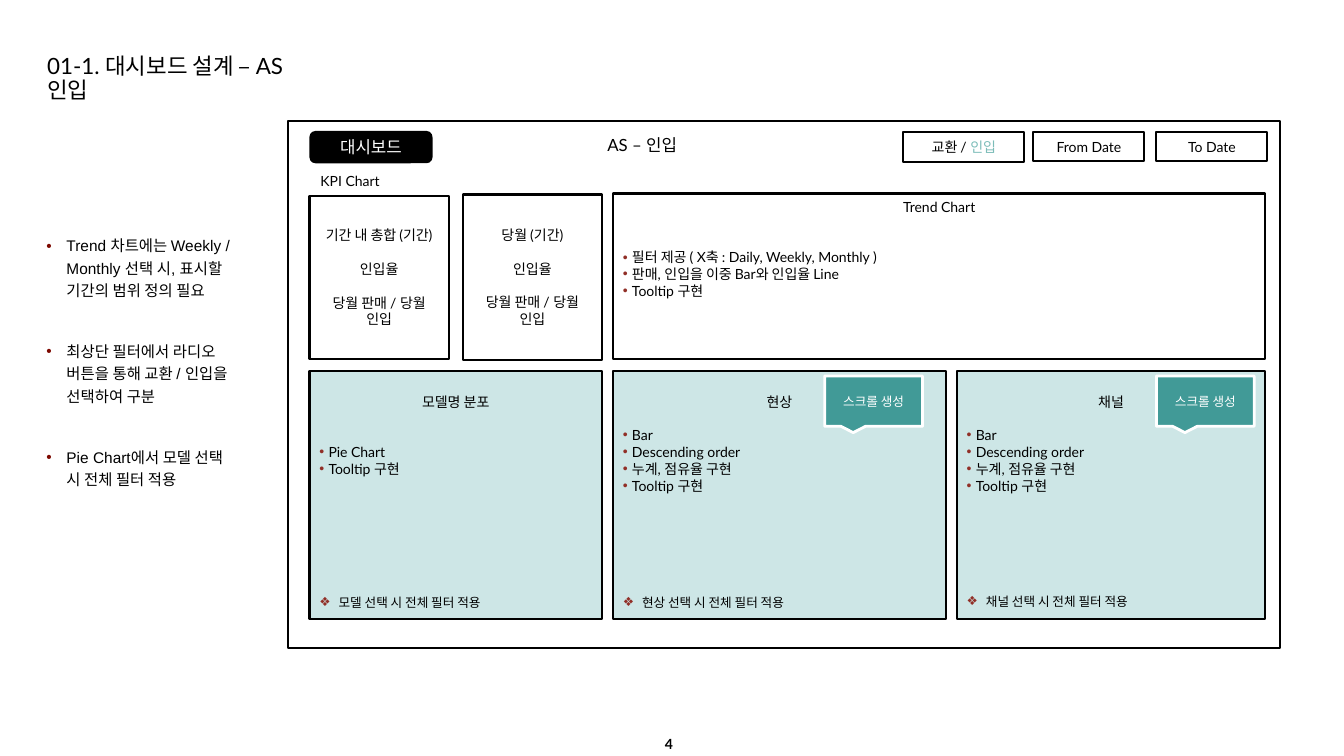
from dataclasses import dataclass

from lxml.etree import SubElement
from pptx import Presentation
from pptx.dml.color import RGBColor
from pptx.enum.shapes import MSO_SHAPE
from pptx.enum.text import MSO_ANCHOR, PP_ALIGN
from pptx.oxml.ns import qn
from pptx.util import Inches, Pt

BLACK, WHITE = "000000", "FFFFFF"
PALE_TEAL, TEAL, SOFT_TEAL = "CDE6E6", "419A97", "7BBCB8"
BRICK, DARK_RED = "912F27", "7D0900"


@dataclass
class Line:
    """One paragraph with its size, spacing and bullet."""
    text: str
    size: float = 10
    before: float = 0
    bullet: str = ""
    indent: float = 0.09
    bullet_color: str = BRICK
    centred: bool = False
    spacing: float = 1.0


def rgb(value):
    """Turn a hex string into a colour."""
    return RGBColor.from_string(value)


def add_bullet(paragraph, line):
    """Give a paragraph a coloured bullet with a hanging indent."""
    properties = paragraph._p.get_or_add_pPr()
    properties.set("marL", str(Inches(line.indent)))
    properties.set("indent", str(-Inches(line.indent)))
    tint = SubElement(properties, qn("a:buClr"))
    SubElement(tint, qn("a:srgbClr")).set("val", line.bullet_color)
    SubElement(properties, qn("a:buFont")).set("typeface", "Arial")
    SubElement(properties, qn("a:buChar")).set("char", line.bullet)


def write(shape, lines, color=BLACK, font="Lato", anchor=MSO_ANCHOR.TOP, top=0.05):
    """Write the lines into a shape and format them."""
    frame = shape.text_frame
    frame.word_wrap = True
    frame.vertical_anchor = anchor
    frame.margin_top = Inches(top)
    frame.text = "\n".join(line.text for line in lines)
    for paragraph, line in zip(frame.paragraphs, lines):
        if line.bullet:
            add_bullet(paragraph, line)
        paragraph.alignment = PP_ALIGN.CENTER if line.centred else PP_ALIGN.LEFT
        paragraph.line_spacing = line.spacing
        paragraph.space_before = Pt(line.before)
        for run in paragraph.runs:
            run.font.name = font
            run.font.size = Pt(line.size)
            run.font.color.rgb = rgb(color)
    return frame


def add_box(slide, place, fill=WHITE, line=BLACK, width=1.5, kind=MSO_SHAPE.RECTANGLE):
    """Draw a filled and outlined preset shape."""
    box = slide.shapes.add_shape(kind, *map(Inches, place))
    box.shadow.inherit = False
    box.fill.solid()
    box.fill.fore_color.rgb = rgb(fill)
    box.line.color.rgb = rgb(line)
    box.line.width = Pt(width)
    return box


def add_label(slide, place, lines, **style):
    """Place a text box."""
    return write(slide.shapes.add_textbox(*map(Inches, place)), lines, **style)


def add_button(slide, place, text):
    """Draw a filter button with a centred caption."""
    return write(add_box(slide, place), [Line(text, centred=True)], anchor=MSO_ANCHOR.MIDDLE)


def add_kpi_card(slide, place, texts):
    """Draw a KPI card with evenly spaced captions."""
    lines = [Line(text, before=12 if index else 0, centred=True)
             for index, text in enumerate(texts)]
    write(add_box(slide, place), lines, anchor=MSO_ANCHOR.MIDDLE)


def bullet_lines(texts, gap):
    """Make bulleted lines set off from the heading by a gap."""
    return [Line(text, before=0 if index else gap, bullet="•")
            for index, text in enumerate(texts)]


def add_panel(slide, left, width, heading, points, gap, footer, footer_gap):
    """Draw a chart panel with heading, points and a footer."""
    lines = [Line(heading, centred=True), *bullet_lines(points, gap),
             Line(footer, 9, footer_gap, "❖", 0.19)]
    write(add_box(slide, (left, 3.68, width, 2.46), PALE_TEAL), lines, top=0.22)


def add_callout(slide, left):
    """Draw a scroll callout."""
    callout = add_box(slide, (left, 3.73, 0.97, 0.5), TEAL, WHITE, 2,
                      MSO_SHAPE.RECTANGULAR_CALLOUT)
    write(callout, [Line("스크롤 생성", 9, centred=True)], WHITE, anchor=MSO_ANCHOR.MIDDLE)


def add_notes_column(slide, notes):
    """Place the bulleted remarks beside the dashboard."""
    lines = [Line(note, 11, 28 if index else 0, "•", 0.2, DARK_RED, spacing=1.2)
             for index, note in enumerate(notes)]
    frame = add_label(slide, (0.38, 1.92, 2.06, 3.27), lines, font="Arial", top=0.39)
    frame.margin_left = frame.margin_right = Inches(0.08)


def add_header(slide):
    """Draw the dashboard badge, heading and filter buttons."""
    badge = add_box(slide, (3.08, 1.31, 1.2, 0.3), BLACK, kind=MSO_SHAPE.ROUNDED_RECTANGLE)
    write(badge, [Line("대시보드", 12, centred=True)], WHITE, anchor=MSO_ANCHOR.MIDDLE)
    add_label(slide, (5.03, 1.29, 2.68, 0.3), [Line("AS – 인입", 12, centred=True)])
    toggle = add_button(slide, (8.96, 1.31, 1.2, 0.3), "교환 / ")
    selected = toggle.paragraphs[0].add_run()
    selected.text = "인입"
    selected.font.name = "Lato"
    selected.font.size = Pt(10)
    selected.font.color.rgb = rgb(SOFT_TEAL)
    for left, caption in ((10.25, "From Date"), (11.47, "To Date")):
        add_button(slide, (left, 1.31, 1.1, 0.29), caption)


def main():
    """Build the dashboard design slide."""
    deck = Presentation()
    deck.slide_width, deck.slide_height = Inches(13.33), Inches(7.5)
    slide = deck.slides.add_slide(deck.slide_layouts[6])

    title = add_label(slide, (0.37, 0.5, 3.19, 0.48),
                      [Line("01-1. 대시보드 설계 – AS 인입", 16, spacing=0.9)])
    title.margin_right = Inches(0.3)
    add_box(slide, (2.86, 1.2, 9.84, 5.23))
    add_header(slide)

    add_label(slide, (3.08, 1.66, 2.68, 0.27), [Line("KPI Chart")])
    add_kpi_card(slide, (3.07, 1.94, 1.38, 1.62),
                 ["기간 내 총합 (기간)", "인입율", "당월 판매 / 당월 인입"])
    add_kpi_card(slide, (4.59, 1.93, 1.38, 1.64),
                 ["당월 (기간)", "인입율", "당월 판매 / 당월 인입"])

    trend_points = ["필터 제공 ( X축 : Daily, Weekly, Monthly )",
                    "판매, 인입을 이중 Bar와 인입율 Line", "Tooltip 구현"]
    write(add_box(slide, (6.08, 1.92, 6.47, 1.64)),
          [Line("Trend Chart", centred=True), *bullet_lines(trend_points, 24)])

    ranking_points = ["Bar", "Descending order", "누계, 점유율 구현", "Tooltip 구현"]
    add_panel(slide, 3.07, 2.9, "모델명 분포", ["Pie Chart", "Tooltip 구현"], 24,
              "모델 선택 시 전체 필터 적용", 84)
    add_panel(slide, 6.08, 3.3, "현상", ranking_points, 12, "현상 선택 시 전체 필터 적용", 72)
    add_panel(slide, 9.49, 3.06, "채널", ranking_points, 12, "채널 선택 시 전체 필터 적용", 71)
    for left in (8.18, 11.47):
        add_callout(slide, left)

    add_notes_column(slide, [
        "Trend 차트에는 Weekly / Monthly 선택 시, 표시할 기간의 범위 정의 필요",
        "최상단 필터에서 라디오 버튼을 통해 교환 / 인입을 선택하여 구분",
        "Pie Chart에서 모델 선택 시 전체 필터 적용",
    ])
    number = add_label(slide, (6.37, 7.27, 0.53, 0.23), [Line("4", centred=True)],
                       anchor=MSO_ANCHOR.MIDDLE)
    number.paragraphs[0].runs[0].font.bold = True
    deck.save("out.pptx")


if __name__ == "__main__":
    main()
